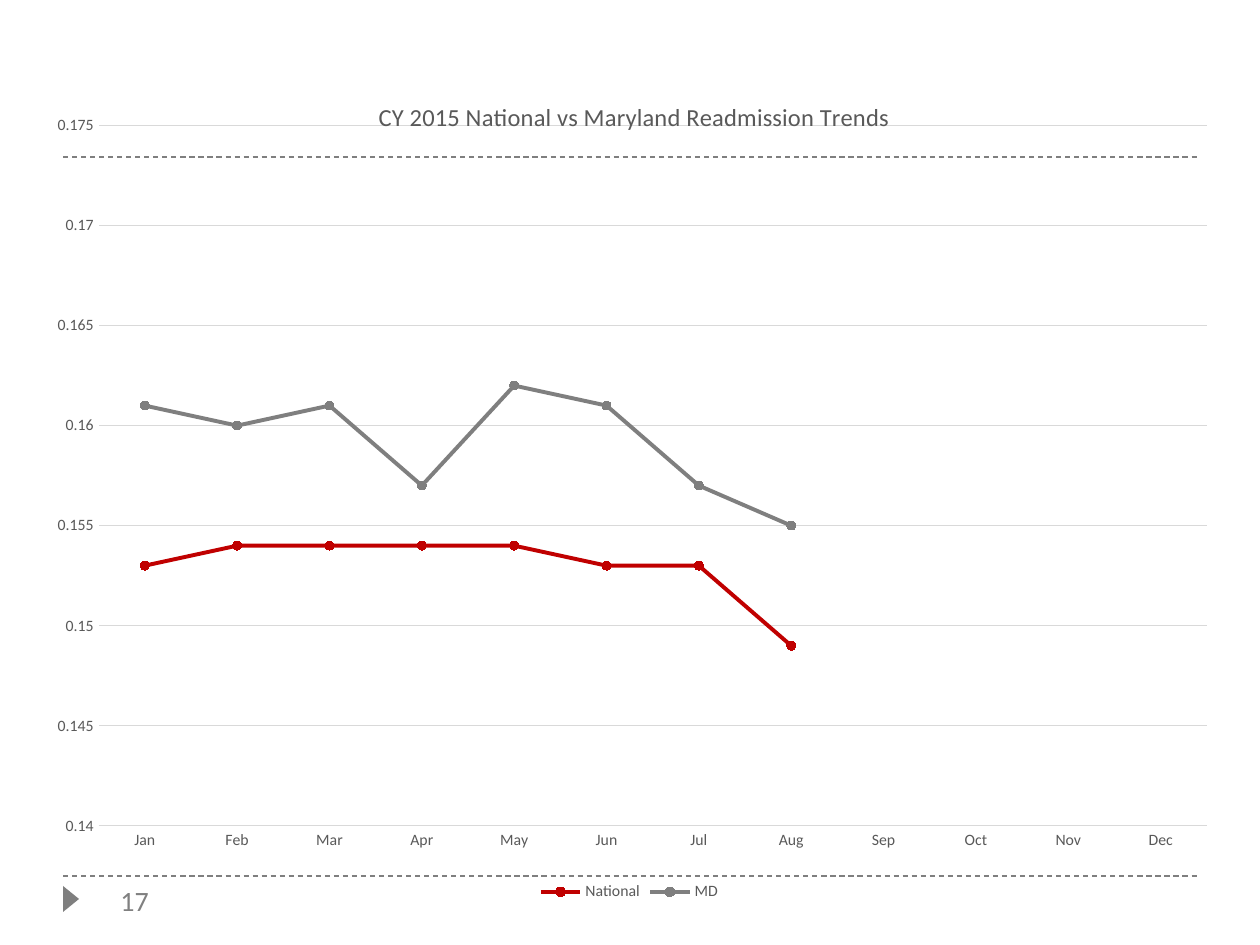
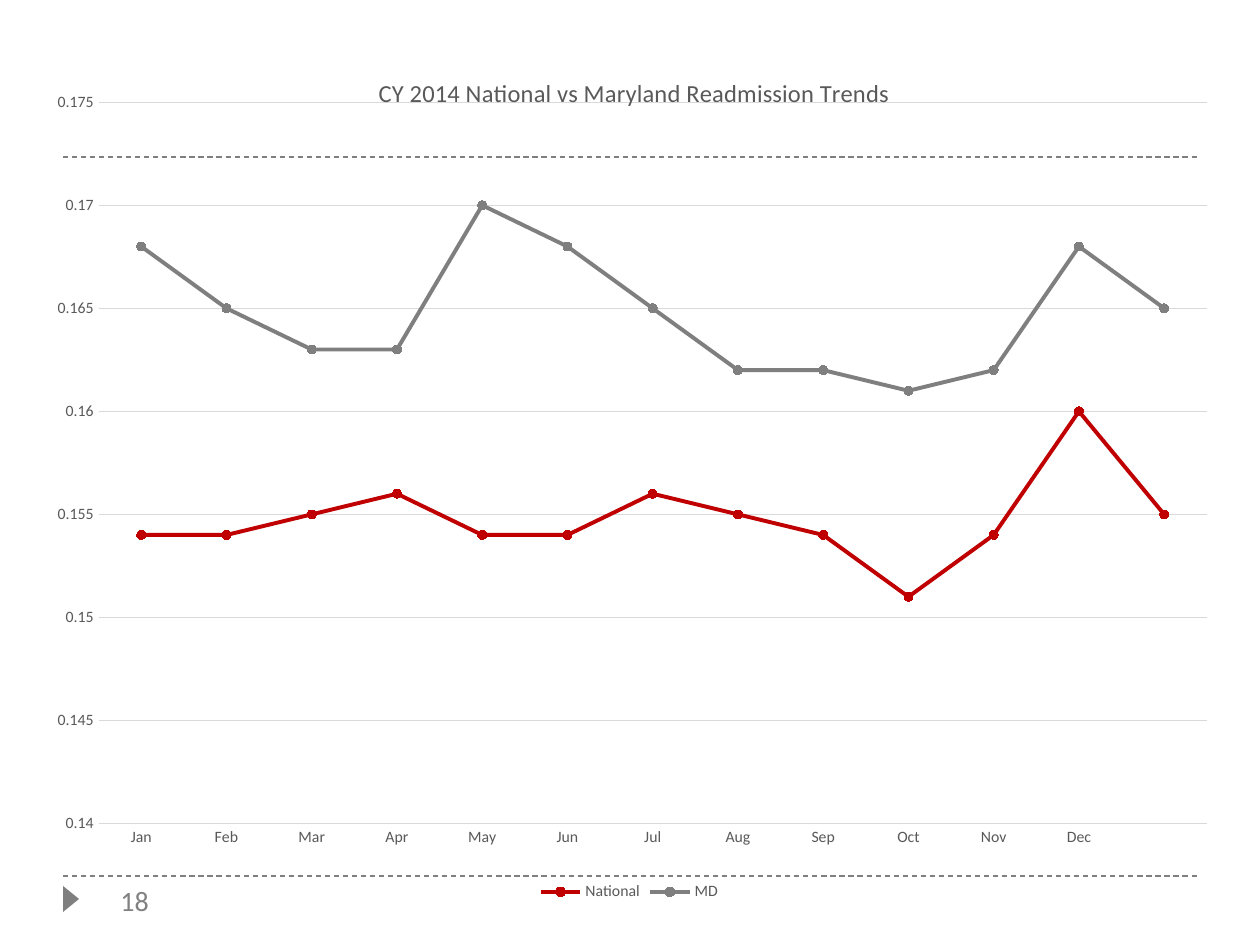
from dataclasses import dataclass

from lxml.etree import SubElement
from pptx import Presentation
from pptx.chart.data import CategoryChartData
from pptx.dml.color import RGBColor
from pptx.enum.chart import (
    XL_CHART_TYPE as ChartType,
    XL_LEGEND_POSITION as LegendPosition,
    XL_MARKER_STYLE as MarkerStyle,
    XL_TICK_MARK as TickMark,
)
from pptx.enum.dml import MSO_LINE_DASH_STYLE as Dash
from pptx.enum.shapes import MSO_CONNECTOR as Connector, MSO_SHAPE as Preset
from pptx.oxml import parse_xml
from pptx.oxml.ns import nsdecls, qn
from pptx.util import Emu, Pt

# Content
MONTHS = ["Jan", "Feb", "Mar", "Apr", "May", "Jun",
          "Jul", "Aug", "Sep", "Oct", "Nov", "Dec"]
SLIDES = [
    {
        "number": "17",
        "title": "CY 2015 National vs Maryland Readmission Trends",
        "chart_top": 64,
        "rates": {
            "National": [0.153, 0.154, 0.154, 0.154, 0.154, 0.153, 0.153, 0.149],
            "MD": [0.161, 0.16, 0.161, 0.157, 0.162, 0.161, 0.157, 0.155],
        },
    },
    {
        "number": "18",
        "title": "CY 2014 National vs Maryland Readmission Trends",
        "chart_top": 39,
        "rates": {
            "National": [0.154, 0.154, 0.155, 0.156, 0.154, 0.154, 0.156,
                         0.155, 0.154, 0.151, 0.154, 0.16, 0.155],
            "MD": [0.168, 0.165, 0.163, 0.163, 0.17, 0.168, 0.165,
                   0.162, 0.162, 0.161, 0.162, 0.168, 0.165],
        },
    },
]


@dataclass(frozen=True)
class Theme:
    font: str = "Calibri"
    rule: str = "7F7F7F"
    number: str = "808080"
    label: str = "595959"
    grid: str = "D9D9D9"
    series: tuple = ("C00000", "7F7F7F")
    title_size: int = 14
    label_size: int = 9
    number_size: int = 16
    thin: float = 0.75
    thick: float = 2.25
    marker: int = 5


THEME = Theme()

# Geometry in px
SLIDE_WIDTH, SLIDE_HEIGHT = 1260, 945
MARGIN = 63
RULE_TOPS = (876, 157)
CHART_LEFT, CHART_WIDTH, CHART_BOTTOM = 33, 1193, 906
PLOT_LAYOUT = {"x": 0.055, "y": 0.073, "w": 0.929, "h": 0.832}
TITLE_LAYOUT = {"x": 0.286, "y": 0.038}


def px(length):
    return Emu(round(length * 914400 / 126))


def color(value):
    return RGBColor.from_string(value)


def format_font(font, size, fill):
    font.name, font.size, font.bold = THEME.font, Pt(size), False
    font.color.rgb = color(fill)


def format_line(line, fill, width):
    line.color.rgb = color(fill)
    line.width = Pt(width)


def set_text(frame, text, size, fill):
    paragraph = frame.paragraphs[0]
    run = paragraph.add_run()
    run.text = text
    format_font(run.font, size, fill)


def set_layout(parent, index, fractions, inner=False):
    """Place a chart part by fractions of the chart's size."""
    old = parent.find(qn("c:layout"))
    if old is not None:
        parent.remove(old)
    layout = parse_xml(f"<c:layout {nsdecls('c')}><c:manualLayout/></c:layout>")
    manual = layout[0]
    if inner:
        SubElement(manual, qn("c:layoutTarget")).set("val", "inner")
    for name in ("x", "y"):
        SubElement(manual, qn(f"c:{name}Mode")).set("val", "edge")
    for name, fraction in fractions.items():
        SubElement(manual, qn(f"c:{name}")).set("val", str(fraction))
    parent.insert(index, layout)


# Rules, marker and number shared by the slides
def add_frame(slide, number):
    for top in RULE_TOPS:
        rule = slide.shapes.add_connector(
            Connector.STRAIGHT, px(MARGIN), px(top), px(SLIDE_WIDTH - MARGIN), px(top))
        format_line(rule.line, THEME.rule, THEME.thin)
        rule.line.dash_style = Dash.DASH
        SubElement(rule._element.spPr, qn("a:effectLst"))

    triangle = slide.shapes.add_shape(
        Preset.ISOSCELES_TRIANGLE, px(58), px(891), px(26), px(16))
    triangle.rotation = 90
    triangle.shadow.inherit = False
    triangle.fill.solid()
    triangle.fill.fore_color.rgb = color(THEME.rule)
    triangle.line.fill.background()

    box = slide.shapes.add_textbox(px(108), px(877), px(59), px(47))
    box.text_frame.word_wrap = False
    set_text(box.text_frame, number, THEME.number_size, THEME.number)


def format_axes(chart):
    for axis in (chart.category_axis, chart.value_axis):
        axis.major_tick_mark = axis.minor_tick_mark = TickMark.NONE
        format_font(axis.tick_labels.font, THEME.label_size, THEME.label)
    format_line(chart.category_axis.format.line, THEME.grid, THEME.thin)
    values = chart.value_axis
    values.minimum_scale, values.maximum_scale, values.major_unit = 0.14, 0.175, 0.005
    values.tick_labels.number_format = "General"
    values.tick_labels.number_format_is_linked = False
    values.format.line.fill.background()
    format_line(values.major_gridlines.format.line, THEME.grid, THEME.thin)


def format_series(series, fill):
    series.smooth = False
    format_line(series.format.line, fill, THEME.thick)
    marker = series.marker
    marker.style, marker.size = MarkerStyle.CIRCLE, THEME.marker
    marker.format.fill.solid()
    marker.format.fill.fore_color.rgb = color(fill)
    format_line(marker.format.line, fill, THEME.thin)


def add_trend_chart(slide, title, top, rates):
    data = CategoryChartData()
    data.categories = MONTHS
    for name, values in rates.items():
        data.add_series(name, values)
    chart = slide.shapes.add_chart(
        ChartType.LINE_MARKERS, px(CHART_LEFT), px(top),
        px(CHART_WIDTH), px(CHART_BOTTOM - top), data).chart
    format_font(chart.font, 10, "000000")

    # Clear chart background, so the rules show through
    chart._chartSpace.find(qn("c:chart")).addnext(
        parse_xml(f"<c:spPr {nsdecls('c', 'a')}><a:noFill/><a:ln><a:noFill/></a:ln></c:spPr>"))

    # Title, legend and plot area
    set_text(chart.chart_title.text_frame, title, THEME.title_size, THEME.label)
    set_layout(chart.chart_title._element, 1, TITLE_LAYOUT)
    chart.has_legend = True
    chart.legend.position = LegendPosition.BOTTOM
    chart.legend.include_in_layout = False
    format_font(chart.legend.font, THEME.label_size, THEME.label)
    set_layout(chart._chartSpace.chart.plotArea, 0, PLOT_LAYOUT, inner=True)

    format_axes(chart)
    chart.plots[0].vary_by_categories = False
    for series, fill in zip(chart.plots[0].series, THEME.series):
        format_series(series, fill)


def main():
    presentation = Presentation()
    presentation.slide_width, presentation.slide_height = px(SLIDE_WIDTH), px(SLIDE_HEIGHT)
    blank_layout = presentation.slide_layouts[6]
    for content in SLIDES:
        slide = presentation.slides.add_slide(blank_layout)
        add_frame(slide, content["number"])
        add_trend_chart(slide, content["title"], content["chart_top"], content["rates"])
    presentation.save("out.pptx")


if __name__ == "__main__":
    main()
